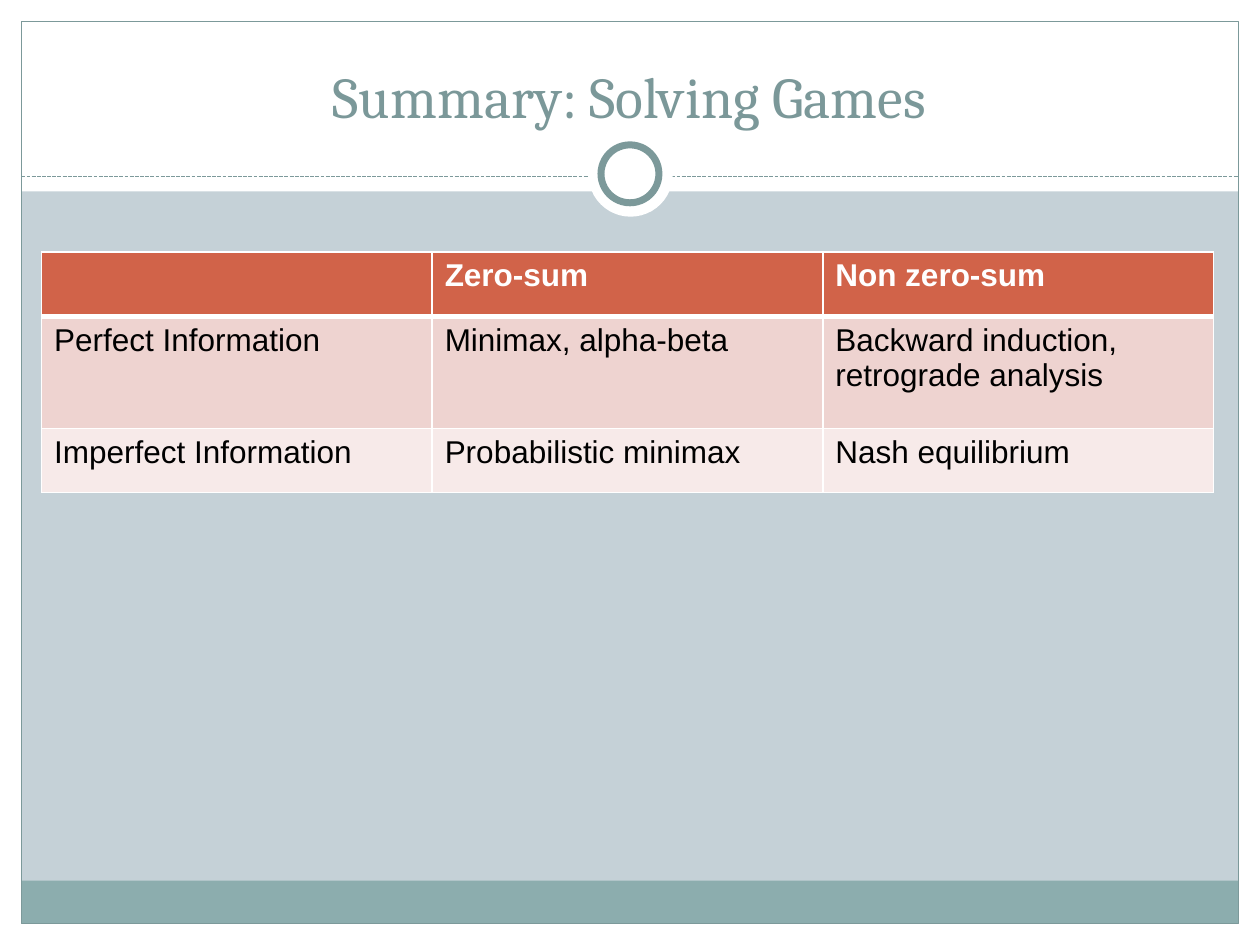
from dataclasses import dataclass
from typing import Optional

from lxml import etree
from pptx import Presentation
from pptx.dml.color import RGBColor
from pptx.enum import dml, shapes, text
from pptx.oxml import ns
from pptx.util import Inches, Pt

COLORS = {
    "white": "FFFFFF",
    "backdrop": "C5D1D7",
    "footer": "8CADAE",
    "frame": "7C999A",
    "title": "7B9899",
    "header": "D16349",
    "odd row": "EED3D0",
    "even row": "F7EAE9",
    "ink": "000000",
}
RECT, OVAL = shapes.MSO_SHAPE.RECTANGLE, shapes.MSO_SHAPE.OVAL


@dataclass
class Decoration:
    left: float
    top: float
    width: float
    height: float
    fill: Optional[str] = "white"
    line: Optional[float] = None
    kind: shapes.MSO_SHAPE = RECT


@dataclass
class Row:
    height: float
    fill: str
    labels: tuple[str, str, str]
    header: bool = False


FRAME = [
    Decoration(0, 7.33, 10, 0.17),
    Decoration(0, 0, 10, 1.52),
    Decoration(0, 0, 0.17, 7.5),
    Decoration(9.83, 0, 0.17, 7.5),
    Decoration(0.17, 6.99, 9.66, 0.34, fill="footer"),
    Decoration(0.17, 0.17, 9.66, 7.16, fill=None, line=0.75),
]
MEDALLION = [
    Decoration(4.67, 1.05, 0.67, 0.67, kind=OVAL),
    Decoration(4.77, 1.15, 0.46, 0.46, line=4, kind=OVAL),
]
GAMES = [
    Row(0.51, "header", ("", "Zero-sum", "Non zero-sum"), header=True),
    Row(0.89, "odd row", ("Perfect Information", "Minimax, alpha-beta",
                          "Backward induction, retrograde analysis")),
    Row(0.51, "even row", ("Imperfect Information", "Probabilistic minimax",
                           "Nash equilibrium")),
]
COLUMN_WIDTH = 3.1


def rgb(name: str) -> RGBColor:
    return RGBColor.from_string(COLORS[name])


def write(frame, words: str, *, font: str, size: float, color: str,
          bold: bool = False, align=text.PP_ALIGN.LEFT) -> None:
    paragraph = frame.paragraphs[0]
    paragraph.alignment = align
    run = paragraph.add_run()
    run.text = words
    run.font.name, run.font.size, run.font.bold = font, Pt(size), bold
    run.font.color.rgb = rgb(color)


def draw_decoration(slide, item: Decoration) -> None:
    shape = slide.shapes.add_shape(
        item.kind, *map(Inches, (item.left, item.top, item.width, item.height)))
    shape.shadow.inherit = False
    if item.fill:
        shape.fill.solid()
        shape.fill.fore_color.rgb = rgb(item.fill)
    else:
        shape.fill.background()
    if item.line:
        shape.line.color.rgb = rgb("frame")
        shape.line.width = Pt(item.line)
    else:
        shape.line.fill.background()


def draw_divider(slide) -> None:
    divider = slide.shapes.add_connector(
        shapes.MSO_CONNECTOR.STRAIGHT, Inches(0.17), Inches(1.4), Inches(9.83), Inches(1.4))
    divider.line.color.rgb = rgb("frame")
    divider.line.width = Pt(0.75)
    divider.line.dash_style = dml.MSO_LINE.SQUARE_DOT
    properties = divider.element.find(ns.qn("p:spPr"))
    etree.SubElement(properties, ns.qn("a:effectLst"))


def add_borders(cell, top: float, bottom: float) -> None:
    """Give the cell white borders; call before the fill is set."""
    properties = cell._tc.get_or_add_tcPr()
    for side, width in {"L": 1, "R": 1, "T": top, "B": bottom}.items():
        border = etree.SubElement(properties, ns.qn(f"a:ln{side}"), w=str(Pt(width)))
        fill = etree.SubElement(border, ns.qn("a:solidFill"))
        etree.SubElement(fill, ns.qn("a:srgbClr"), val=COLORS["white"])


def draw_games(slide, rows: list[Row]) -> None:
    columns = len(rows[0].labels)
    table = slide.shapes.add_table(
        len(rows), columns, Inches(0.33), Inches(2), Inches(COLUMN_WIDTH * columns),
        Inches(sum(row.height for row in rows))).table
    for column in table.columns:
        column.width = Inches(COLUMN_WIDTH)
    for index, row in enumerate(rows):
        table.rows[index].height = Inches(row.height)
        below_header = index > 0 and rows[index - 1].header
        for cell, label in zip(table.rows[index].cells, row.labels):
            add_borders(cell, 3 if below_header else 1, 3 if row.header else 1)
            cell.fill.solid()
            cell.fill.fore_color.rgb = rgb(row.fill)
            if label:
                write(cell.text_frame, label, font="Arial", size=18, bold=row.header,
                      color="white" if row.header else "ink")


def draw_title(slide, words: str) -> None:
    title = slide.shapes.title
    title.left, title.top, title.width, title.height = map(Inches, (0.33, 0.25, 9.33, 0.83))
    frame = title.text_frame
    frame.auto_size = text.MSO_AUTO_SIZE.NONE
    frame.vertical_anchor = text.MSO_ANCHOR.BOTTOM
    write(frame, words, font="Cambria", size=33, color="title", align=text.PP_ALIGN.CENTER)
    slide.shapes.element.append(title.element)  # in front of the white header band


def main() -> None:
    deck = Presentation()
    deck.slide_width, deck.slide_height = Inches(10), Inches(7.5)
    slide = deck.slides.add_slide(deck.slide_layouts.get_by_name("Title Only"))
    slide.background.fill.solid()
    slide.background.fill.fore_color.rgb = rgb("backdrop")
    for item in FRAME:
        draw_decoration(slide, item)
    draw_divider(slide)
    for item in MEDALLION:
        draw_decoration(slide, item)
    draw_title(slide, "Summary: Solving Games")
    draw_games(slide, GAMES)
    deck.save("out.pptx")


if __name__ == "__main__":
    main()
